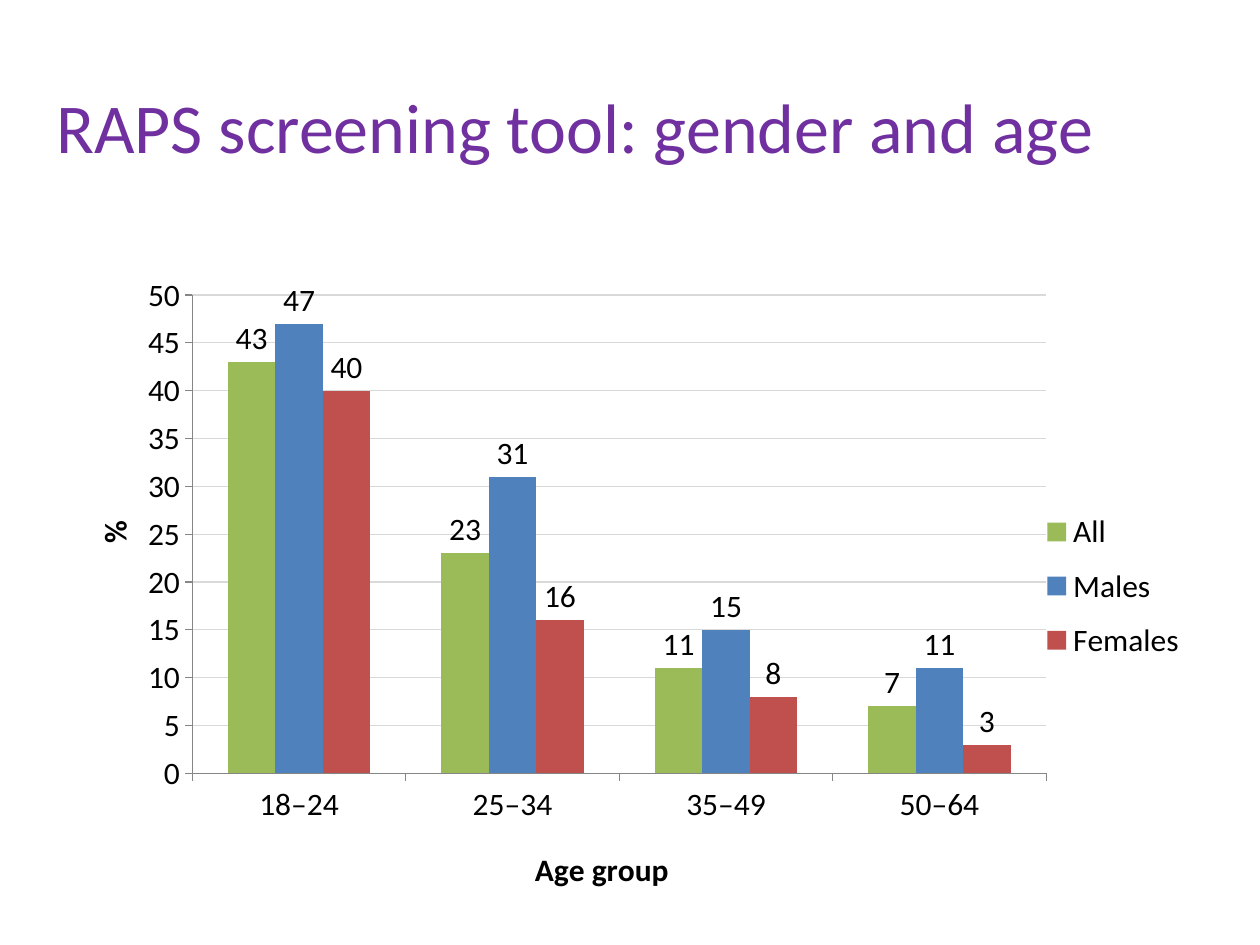
from lxml import etree
from pptx import Presentation
from pptx.chart.data import CategoryChartData
from pptx.dml.color import RGBColor
from pptx.enum.chart import XL_CHART_TYPE, XL_LABEL_POSITION, XL_LEGEND_POSITION, XL_TICK_MARK
from pptx.enum.text import MSO_ANCHOR
from pptx.oxml.ns import qn
from pptx.util import Inches, Pt

COLUMN = XL_CHART_TYPE.COLUMN_CLUSTERED
OUTSIDE_END = XL_LABEL_POSITION.OUTSIDE_END
RIGHT = XL_LEGEND_POSITION.RIGHT
TICK_OUT = XL_TICK_MARK.OUTSIDE
MIDDLE = MSO_ANCHOR.MIDDLE

FONT = "Calibri"
AGES = ["18–24", "25–34", "35–49", "50–64"]
SERIES = [
    ("All", [43, 23, 11, 7], "9BBB59"),
    ("Males", [47, 31, 15, 11], "4F81BD"),
    ("Females", [40, 16, 8, 3], "C0504D"),
]


def rgb(value):
    """Return the colour for a hex string."""
    return RGBColor.from_string(value)


def set_font(font, size, color, bold=False):
    """Set face, size, colour and weight of a font."""
    font.name = FONT
    font.size = Pt(size)
    font.color.rgb = rgb(color)
    font.bold = bold


def set_layout(parent, index, **fractions):
    """Place a chart part at fractions of the chart area."""
    for old in parent.findall(qn("c:layout")):
        parent.remove(old)
    layout = etree.Element(qn("c:layout"))
    manual = etree.SubElement(layout, qn("c:manualLayout"))
    if "w" in fractions and index == 0:
        etree.SubElement(manual, qn("c:layoutTarget")).set("val", "inner")
    for mode in ("xMode", "yMode"):
        etree.SubElement(manual, qn(f"c:{mode}")).set("val", "edge")
    for name, value in fractions.items():
        etree.SubElement(manual, qn(f"c:{name}")).set("val", str(value))
    parent.insert(index, layout)


def add_title(slide, left, top, width, height):
    """Add the slide title."""
    tf = slide.shapes.add_textbox(left, top, width, height).text_frame
    tf.word_wrap = True
    tf.vertical_anchor = MIDDLE
    p = tf.paragraphs[0]
    p.text = "RAPS screening tool: gender and age"
    set_font(p.font, 40, "7030A0")


def style_axis(axis, title, x, y):
    """Style an axis and place its title."""
    axis.major_tick_mark = TICK_OUT
    axis.format.line.color.rgb = rgb("868686")
    axis.format.line.width = Pt(0.75)
    p = axis.axis_title.text_frame.paragraphs[0]
    p.text = title
    set_font(p.font, 18, "000000", bold=True)
    set_layout(axis.axis_title._element, 1, x=x, y=y)


def add_age_chart(slide, left, top, width, height):
    """Add the column chart of positive screens by age and gender."""
    data = CategoryChartData(number_format="#,##0")
    data.categories = AGES
    for name, values, _ in SERIES:
        data.add_series(name, values)
    chart = slide.shapes.add_chart(COLUMN, left, top, width, height, data).chart
    set_font(chart.font, 18, "000000")
    chart.has_title = False
    set_layout(chart._chartSpace.chart.plotArea, 0, x=0.113, y=0.033, w=0.753, h=0.776)

    style_axis(chart.category_axis, "Age group", x=0.41, y=0.92)
    axis = chart.value_axis
    style_axis(axis, "%", x=0.02, y=0.39)
    axis.minimum_scale, axis.maximum_scale, axis.major_unit = 0, 50, 5
    axis.tick_labels.number_format = "0"
    axis.tick_labels.number_format_is_linked = False
    axis.major_gridlines.format.line.color.rgb = rgb("D9D9D9")
    axis.major_gridlines.format.line.width = Pt(0.75)

    chart.has_legend = True
    chart.legend.position = RIGHT
    chart.legend.include_in_layout = False
    set_layout(chart.legend._element, 1, x=0.86, y=0.36, w=0.13, h=0.29)

    plot = chart.plots[0]
    plot.gap_width = 150
    plot.overlap = 0
    plot.vary_by_categories = False
    for series, (_, _, color) in zip(plot.series, SERIES):
        series.format.fill.solid()
        series.format.fill.fore_color.rgb = rgb(color)
        labels = series.data_labels
        labels.show_value = True
        labels.position = OUTSIDE_END
        labels.number_format = "#,##0"
        labels.number_format_is_linked = False


def main():
    """Build the slide and save it."""
    prs = Presentation()
    prs.slide_width, prs.slide_height = Inches(10), Inches(7.5)
    slide = prs.slides.add_slide(prs.slide_layouts[6])
    add_title(slide, Inches(0.35), Inches(0.21), Inches(9.06), Inches(1.57))
    add_age_chart(slide, Inches(0.51), Inches(2.18), Inches(9), Inches(4.95))
    prs.save("out.pptx")


if __name__ == "__main__":
    main()
